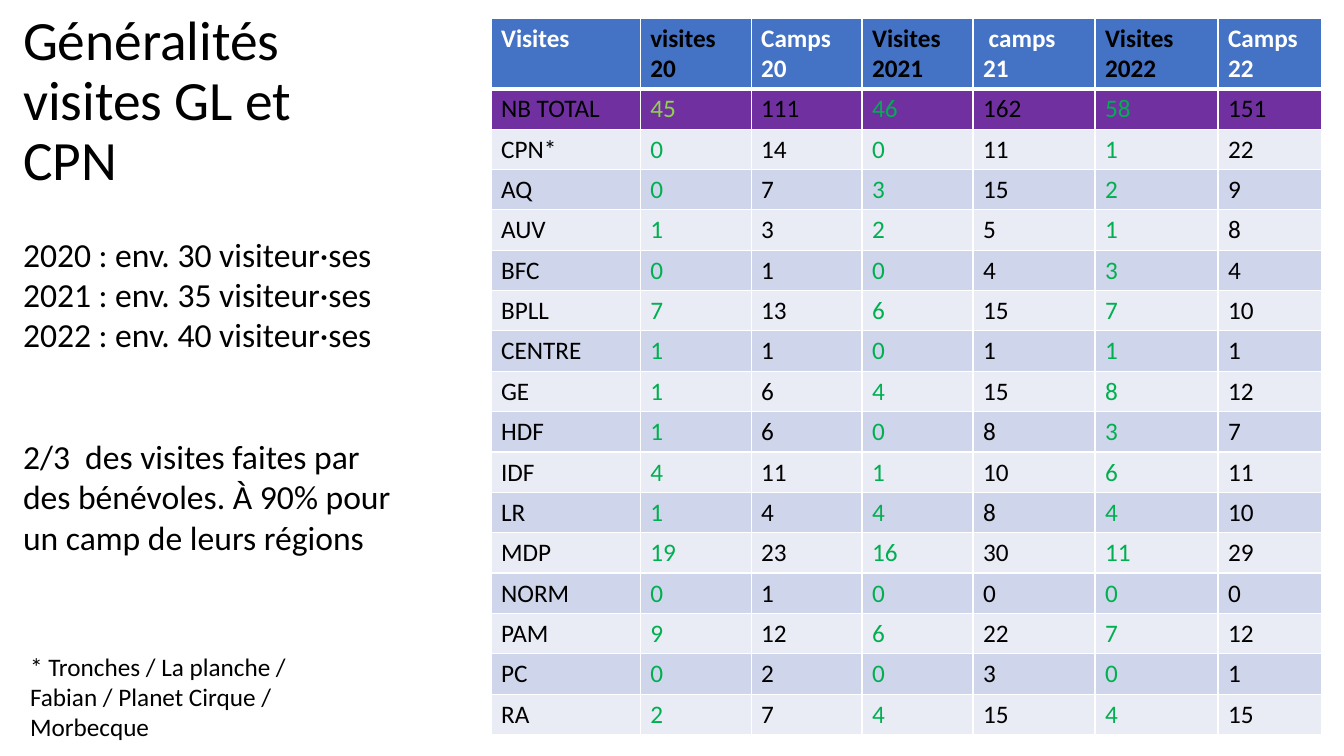
from lxml.etree import SubElement
from pptx import Presentation
from pptx.dml.color import RGBColor
from pptx.enum.text import MSO_ANCHOR as Anchor
from pptx.oxml.ns import qn
from pptx.util import Inches, Pt

BLACK = RGBColor(0x00, 0x00, 0x00)
WHITE = RGBColor(0xFF, 0xFF, 0xFF)
BLUE = RGBColor(0x44, 0x72, 0xC4)
PURPLE = RGBColor(0x70, 0x30, 0xA0)
GREEN = RGBColor(0x00, 0xB0, 0x50)
LIME = RGBColor(0x92, 0xD0, 0x50)
BANDS = [RGBColor(0xE9, 0xEB, 0xF5), RGBColor(0xCF, 0xD5, 0xEA)]

HEADINGS = ["Visites", "visites 20", "Camps 20", "Visites 2021",
            " camps 21", "Visites 2022", "Camps 22"]
REGIONS = [
    ["NB TOTAL", 45, 111, 46, 162, 58, 151],
    ["CPN*", 0, 14, 0, 11, 1, 22],
    ["AQ", 0, 7, 3, 15, 2, 9],
    ["AUV", 1, 3, 2, 5, 1, 8],
    ["BFC", 0, 1, 0, 4, 3, 4],
    ["BPLL", 7, 13, 6, 15, 7, 10],
    ["CENTRE", 1, 1, 0, 1, 1, 1],
    ["GE", 1, 6, 4, 15, 8, 12],
    ["HDF", 1, 6, 0, 8, 3, 7],
    ["IDF", 4, 11, 1, 10, 6, 11],
    ["LR", 1, 4, 4, 8, 4, 10],
    ["MDP", 19, 23, 16, 30, 11, 29],
    ["NORM", 0, 1, 0, 0, 0, 0],
    ["PAM", 9, 12, 6, 22, 7, 12],
    ["PC", 0, 2, 0, 3, 0, 1],
    ["RA", 2, 7, 4, 15, 4, 15],
]
COLUMN_WIDTHS = [1.48, 1.1, 1.1, 1.1, 1.21, 1.22, 1.03]
ROW_HEIGHT = 0.39


class SlideBuilder:
    """Holds the current slide and its text style."""

    def __init__(self, slide, font_name="Calibri"):
        self.slide = slide
        self.font_name = font_name

    def add_run(self, paragraph, text, size, color=BLACK, bold=False):
        run = paragraph.add_run()
        run.text = text
        run.font.name = self.font_name
        run.font.size = Pt(size)
        run.font.bold = bold
        run.font.color.rgb = color

    def add_text(self, box, paragraphs, size, anchor=Anchor.TOP,
                 line_spacing=1.0):
        """Each paragraph is (space before, lines)."""
        shape = self.slide.shapes.add_textbox(*map(Inches, box))
        frame = shape.text_frame
        frame.word_wrap = True
        frame.vertical_anchor = anchor
        for index, (space_before, lines) in enumerate(paragraphs):
            paragraph = frame.add_paragraph() if index else frame.paragraphs[0]
            paragraph.line_spacing = line_spacing
            if space_before:
                paragraph.space_before = Pt(space_before)
            for number, line in enumerate(lines):
                if number:
                    paragraph.add_line_break()
                self.add_run(paragraph, line, size)

    def add_borders(self, cell, top, bottom):
        properties = cell._tc.get_or_add_tcPr()
        for side, width in (("L", 1), ("R", 1), ("T", top), ("B", bottom)):
            line = SubElement(properties, qn(f"a:ln{side}"), w=str(Pt(width)))
            fill = SubElement(line, qn("a:solidFill"))
            SubElement(fill, qn("a:srgbClr"), val=str(WHITE))

    def add_table(self, left, top, rows, widths, row_height, cell_style):
        frame = self.slide.shapes.add_table(
            len(rows), len(widths), Inches(left), Inches(top),
            Inches(sum(widths)), Inches(row_height * len(rows)))
        table = frame.table
        for column, width in zip(table.columns, widths):
            column.width = Inches(width)
        for row_index, values in enumerate(rows):
            table.rows[row_index].height = Inches(row_height)
            for column_index, value in enumerate(values):
                cell = table.cell(row_index, column_index)
                fill, color = cell_style(row_index, column_index)
                # A thick rule separates the headings from the figures
                self.add_borders(cell, top=3 if row_index == 1 else 1,
                                 bottom=3 if row_index == 0 else 1)
                cell.fill.solid()
                cell.fill.fore_color.rgb = fill
                self.add_run(cell.text_frame.paragraphs[0], str(value), 18,
                             color, bold=row_index == 0)


def visit_cell_style(row, column):
    """Fill and text colour; odd columns hold the visits."""
    is_visits = column % 2 == 1
    if row == 0:
        return BLUE, BLACK if is_visits else WHITE
    color = GREEN if is_visits else BLACK
    if row == 1:
        return PURPLE, LIME if column == 1 else color
    return BANDS[row % 2], color


def main():
    presentation = Presentation()
    presentation.slide_width = Inches(13.33)
    presentation.slide_height = Inches(7.5)
    slide = presentation.slides.add_slide(presentation.slide_layouts[6])
    builder = SlideBuilder(slide)

    # Title
    builder.add_text((0.13, 0.29, 3.89, 1.45),
                     [(0, ["Généralités visites GL et CPN"])],
                     39.6, Anchor.MIDDLE, 0.9)

    # Visits and camps by region
    builder.add_table(4.87, 0.18, [HEADINGS] + REGIONS, COLUMN_WIDTHS,
                      ROW_HEIGHT, visit_cell_style)

    # Visitors per year
    builder.add_text((0.13, 2.27, 4.02, 3.33), [
        (0, ["2020 : env. 30 visiteur·ses", "2021 : env. 35 visiteur·ses"]),
        (0, ["2022 : env. 40 visiteur·ses"]),
        (58, ["2/3  des visites faites par des bénévoles. "
              "À 90% pour un camp de leurs régions"]),
    ], 24)

    # Footnote
    builder.add_text((0.2, 6.41, 3.13, 1.01), [
        (0, ["* Tronches / La planche / Fabian / Planet Cirque / Morbecque"]),
    ], 18)

    presentation.save("out.pptx")


if __name__ == "__main__":
    main()
